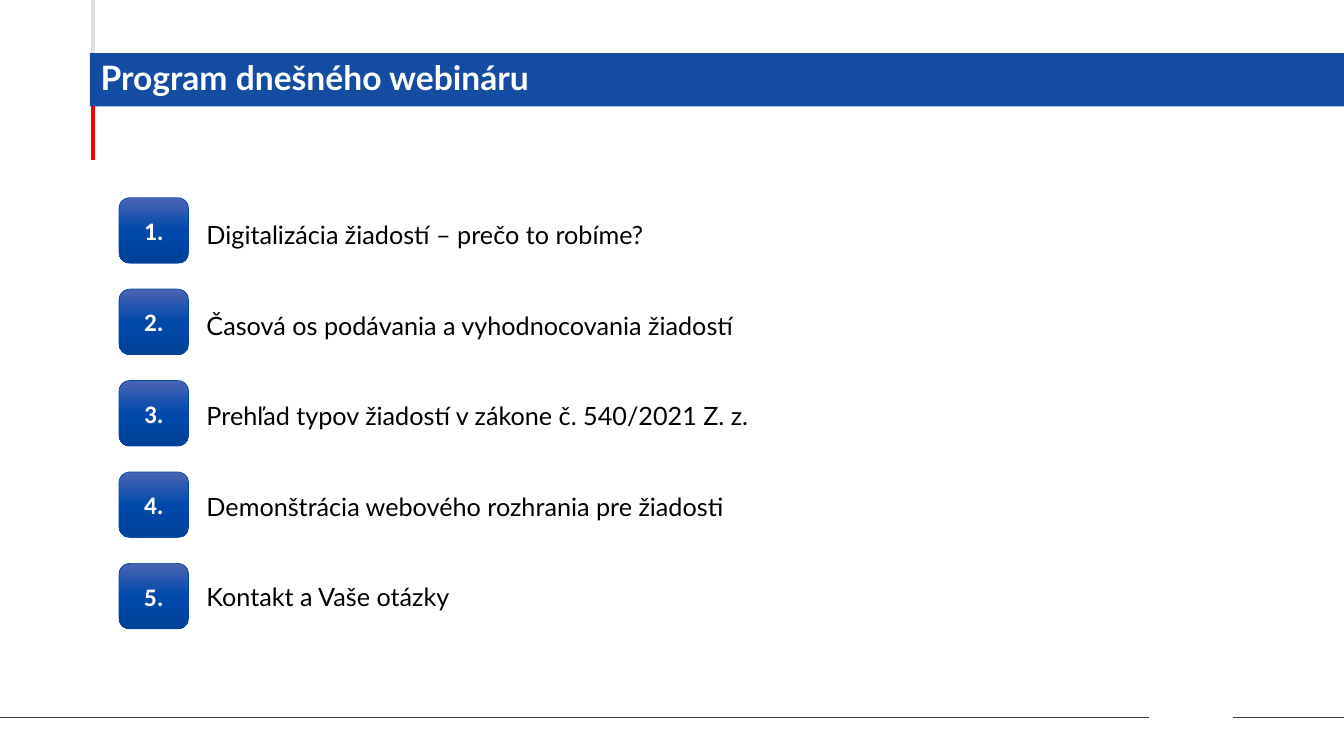
import copy

import pptx
import pptx.dml.color
import pptx.enum.shapes
import pptx.enum.text
import pptx.oxml.xmlchemy
import pptx.util
from pptx.util import Pt


def color(value):
    return pptx.dml.color.RGBColor.from_string(value)


def write(shape, text, font_name, size, ink, bold):
    frame = shape.text_frame
    frame.word_wrap = True
    frame.vertical_anchor = pptx.enum.text.MSO_ANCHOR.MIDDLE
    para = frame.paragraphs[0]
    para.text = text
    para.font.name = font_name
    para.font.size = Pt(size)
    para.font.bold = bold
    para.font.color.rgb = color(ink)
    return para


deck = pptx.Presentation()
deck.slide_width = Pt(960)
deck.slide_height = Pt(540)
page = deck.slides.add_slide(deck.slide_layouts[6])
shapes = page.shapes

banner = shapes.add_shape(
    pptx.enum.shapes.MSO_SHAPE.RECTANGLE, Pt(64.2), Pt(38), Pt(895.8), Pt(38)
)
banner.shadow.inherit = False
banner.fill.solid()
banner.fill.fore_color.rgb = color("144CA2")
banner.line.fill.background()

rules = [
    (66.4, 114, 66.4, 76, "F60000", 3),
    (66.4, 0, 66.4, 38, "DDDEDD", 3),
    (0, 512.3, 820.8, 512.3, "404040", 0.75),
    (880.6, 512.3, 960, 512.3, "404040", 0.75),
]
for x1, y1, x2, y2, ink, width in rules:
    rule = shapes.add_connector(
        pptx.enum.shapes.MSO_CONNECTOR.STRAIGHT, Pt(x1), Pt(y1), Pt(x2), Pt(y2)
    )
    rule.line.color.rgb = color(ink)
    rule.line.width = Pt(width)
    rule.element.spPr.append(pptx.oxml.xmlchemy.OxmlElement("a:effectLst"))

title = shapes.add_textbox(Pt(64.8), Pt(38), Pt(829.4), Pt(37.4))
write(title, "Program dnešného webináru", "Lato", 24, "FFFFFF", True).line_spacing = 0.9

topics = [
    "Digitalizácia žiadostí – prečo to robíme?",
    "Časová os podávania a vyhodnocovania žiadostí",
    "Prehľad typov žiadostí v zákone č. 540/2021 Z. z.",
    "Demonštrácia webového rozhrania pre žiadosti",
    "Kontakt a Vaše otázky",
]
gradient = [(0, "4B64B3"), (0.5, "0049AB"), (1, "004198")]
for index, topic in enumerate(topics):
    badge = shapes.add_shape(
        pptx.enum.shapes.MSO_SHAPE.ROUNDED_RECTANGLE,
        Pt(85), Pt(141.2 + 65.3 * index), Pt(49.7), Pt(46.8),
    )
    badge.shadow.inherit = False
    badge.fill.gradient()
    badge.fill.gradient_angle = 270
    stop_list = badge.element.xpath(".//a:gsLst")[0]
    stop_list.append(copy.deepcopy(stop_list[0]))
    for stop, (position, ink) in zip(badge.fill.gradient_stops, gradient):
        stop.position = position
        stop.color.rgb = color(ink)
    badge.line.color.rgb = color("044AA7")
    badge.line.width = Pt(0.5)
    number = write(badge, f"{index + 1}.", "Calibri", 18, "FFFFFF", True)
    number.alignment = pptx.enum.text.PP_ALIGN.CENTER

    label = shapes.add_textbox(Pt(140.4), Pt(149 + 64.6 * index), Pt(531.4), Pt(37.4))
    write(label, topic, "Lato", 18, "000000", False)

deck.save("out.pptx")
